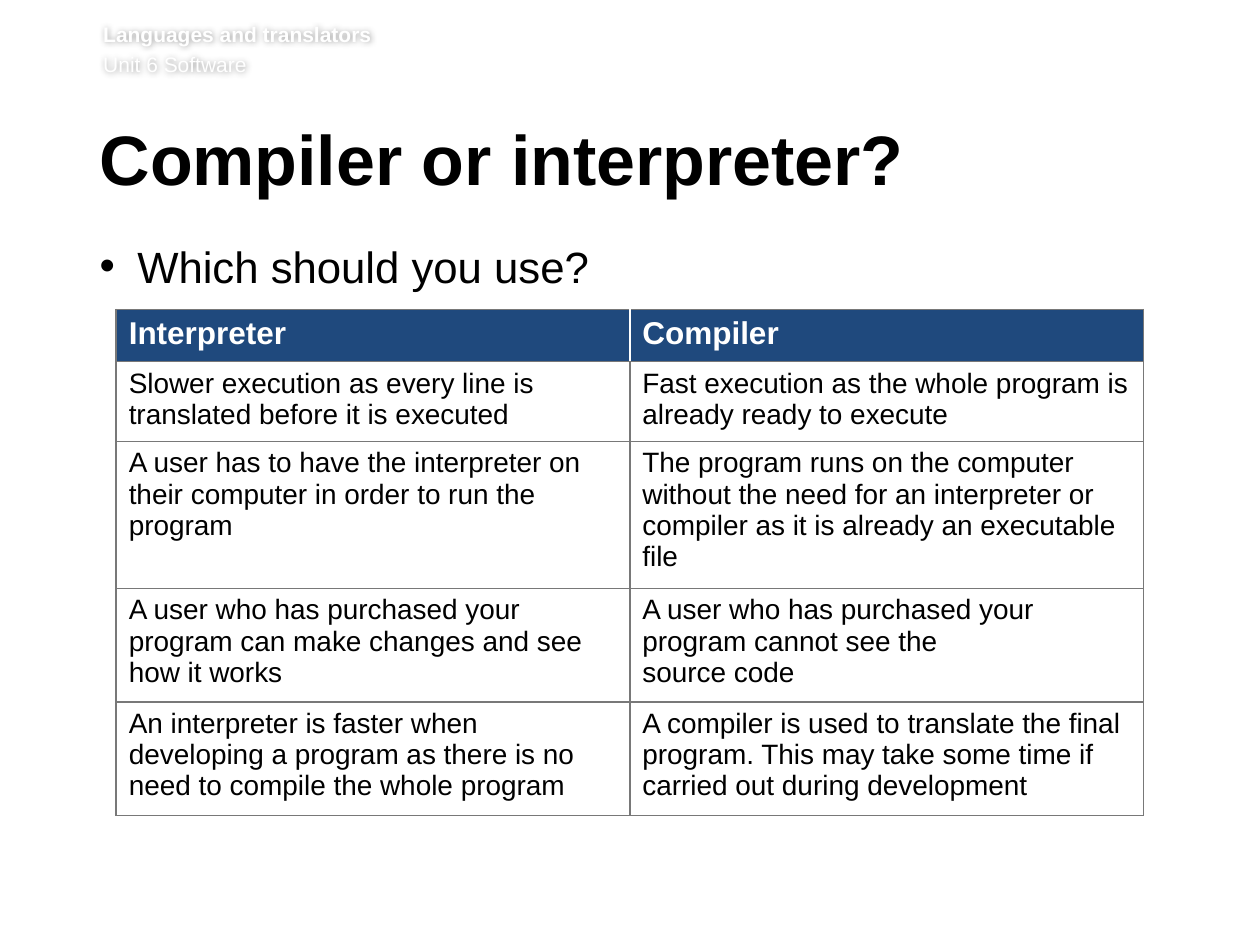
from lxml import etree
from pptx import Presentation
from pptx.dml.color import RGBColor
from pptx.enum.text import MSO_ANCHOR
from pptx.oxml.ns import qn
from pptx.util import Pt

TOP = MSO_ANCHOR.TOP
FONT = "Arial"
COLORS = {"text": "000000", "light": "FFFFFF", "header": "1F497D", "border": "787878"}

TABLE_LEFT, TABLE_TOP, COLUMN_WIDTH = 66.4, 177, 293.5
ROW_HEIGHTS = [29.7, 42.8, 78.3, 60.6, 60.6]
COMPARISON = [
    ("Interpreter", "Compiler"),
    ("Slower execution as every line is translated before it is executed",
     "Fast execution as the whole program is already ready to execute"),
    ("A user has to have the interpreter on their computer in order to run the program",
     "The program runs on the computer without the need for an interpreter or "
     "compiler as it is already an executable file"),
    ("A user who has purchased your program can make changes and see how it works",
     "A user who has purchased your program cannot see the \vsource code"),
    ("An interpreter is faster when developing a program as there is no need to "
     "compile the whole program",
     "A compiler is used to translate the final program. This may take some time "
     "if carried out during development"),
]


def add_element(parent, tag, **attributes):
    return etree.SubElement(parent, qn(tag), attributes)


def style(paragraph, size, color, bold=False):
    for run in paragraph.runs:
        run.font.name = FONT
        run.font.size = Pt(size)
        run.font.bold = bold
        run.font.color.rgb = RGBColor.from_string(COLORS[color])


def add_text(slide, text, box, insets):
    textbox = slide.shapes.add_textbox(*map(Pt, box))
    frame = textbox.text_frame
    frame.word_wrap = True
    frame.vertical_anchor = TOP
    (frame.margin_left, frame.margin_top,
     frame.margin_right, frame.margin_bottom) = map(Pt, insets)
    frame.text = text
    return textbox


def add_halo(textbox):
    effects = add_element(textbox.element.spPr, "a:effectLst")
    shadow = add_element(effects, "a:outerShdw", blurRad=str(Pt(4)), dist="0",
                         algn="ctr", rotWithShape="0")
    black = add_element(shadow, "a:srgbClr", val=COLORS["text"])
    add_element(black, "a:alpha", val="40000")


def add_bullet(paragraph, indent):
    properties = paragraph._p.get_or_add_pPr()
    properties.set("marL", str(Pt(indent)))
    properties.set("indent", str(Pt(-indent)))
    add_element(properties, "a:buFont", typeface=FONT)
    add_element(properties, "a:buChar", char="•")


def set_borders(cell, colors):
    properties = cell._tc.get_or_add_tcPr()
    for position, (side, color) in enumerate(zip("LRTB", colors)):
        line = etree.Element(qn(f"a:ln{side}"), w=str(Pt(1)))
        fill = add_element(line, "a:solidFill")
        add_element(fill, "a:srgbClr", val=COLORS[color])
        properties.insert(position, line)


def add_comparison(slide):
    rows, columns = len(COMPARISON), len(COMPARISON[0])
    table = slide.shapes.add_table(
        rows, columns, Pt(TABLE_LEFT), Pt(TABLE_TOP),
        Pt(COLUMN_WIDTH * columns), Pt(sum(ROW_HEIGHTS))).table
    for column in table.columns:
        column.width = Pt(COLUMN_WIDTH)
    for r, (height, texts) in enumerate(zip(ROW_HEIGHTS, COMPARISON)):
        table.rows[r].height = Pt(height)
        is_header = r == 0
        for c, text in enumerate(texts):
            cell = table.cell(r, c)
            paragraph = cell.text_frame.paragraphs[0]
            paragraph.text = text
            borders = ["border"] * 4
            if is_header:
                style(paragraph, 18, "light", bold=True)
                cell.fill.solid()
                cell.fill.fore_color.rgb = RGBColor.from_string(COLORS["header"])
                borders[1 - c] = "light"  # white divider between the headings
            else:
                style(paragraph, 16, "text")
                cell.fill.background()
            set_borders(cell, borders)


def main():
    presentation = Presentation()
    presentation.slide_width, presentation.slide_height = Pt(720), Pt(540)
    slide = presentation.slides.add_slide(presentation.slide_layouts[6])

    # Unit heading
    unit = add_text(slide, "Languages and translators\nUnit 6 Software",
                    (59, 12.2, 635, 35.3), (0, 0, 0, 3.6))
    topic, unit_name = unit.text_frame.paragraphs
    style(topic, 12, "light", bold=True)
    style(unit_name, 12, "light")
    unit_name.space_before = Pt(2.9)
    add_halo(unit)

    # Title
    title = add_text(slide, "Compiler or interpreter?",
                     (56.9, 71.3, 615.6, 52.6), (0, 3.6, 7.2, 3.6))
    title_line = title.text_frame.paragraphs[0]
    title_line.line_spacing = Pt(39)
    title_line.space_after = Pt(15)
    style(title_line, 40, "text", bold=True)

    # Question
    question = add_text(slide, "Which should you use?",
                        (56.9, 133.9, 614.2, 406), (0, 3, 7.2, 3.6))
    question_line = question.text_frame.paragraphs[0]
    question_line.space_after = Pt(14)
    add_bullet(question_line, 21.6)
    style(question_line, 25, "text")

    # Comparison table
    add_comparison(slide)

    presentation.save("out.pptx")


if __name__ == "__main__":
    main()
